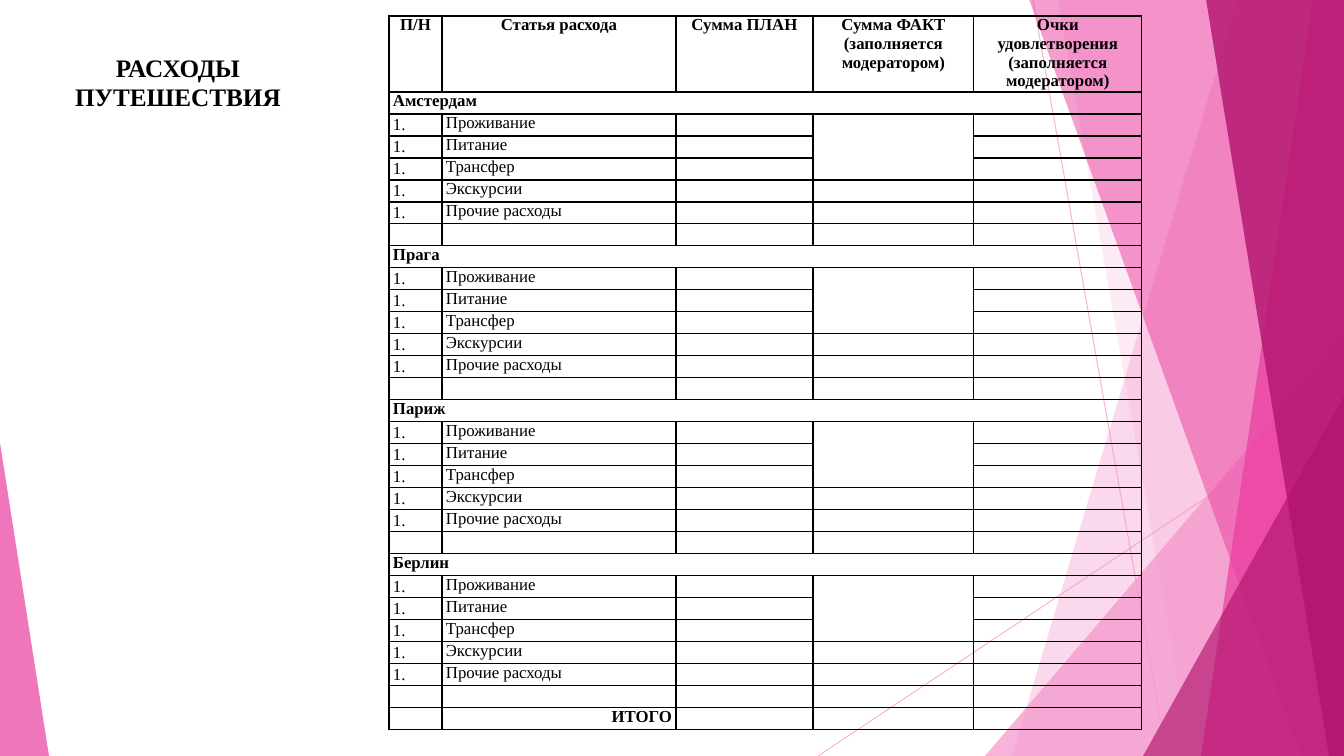
"""Build the travel expenses slide with its table of cities and costs."""
from dataclasses import dataclass

from lxml import etree
from pptx import Presentation
from pptx.dml.color import RGBColor
from pptx.enum.shapes import MSO_CONNECTOR, MSO_SHAPE
from pptx.enum.text import MSO_ANCHOR, MSO_AUTO_SIZE, PP_ALIGN
from pptx.oxml.ns import qn
from pptx.util import Pt

STRAIGHT = MSO_CONNECTOR.STRAIGHT
TRIANGLE = MSO_SHAPE.ISOSCELES_TRIANGLE
TOP = MSO_ANCHOR.TOP
NO_AUTOFIT = MSO_AUTO_SIZE.NONE
LEFT, CENTER, RIGHT = PP_ALIGN.LEFT, PP_ALIGN.CENTER, PP_ALIGN.RIGHT

SLIDE_W, SLIDE_H = 1344, 756
EMU_PER_PX = 12192000 / SLIDE_W
TITLE_ONLY = 5


@dataclass(frozen=True)
class Theme:
    font: str = "Times New Roman"
    title_size: int = 18
    cell_size: int = 12
    hairline: float = 0.75
    border: float = 1
    ink: str = "000000"
    pink: str = "F496CB"
    magenta: str = "EB3D9F"
    plum: str = "B2136D"


@dataclass(frozen=True)
class Ray:
    x1: int
    y1: int
    x2: int
    y2: int


@dataclass(frozen=True)
class Band:
    top_x: int
    bottom_x: int
    color: str
    opacity: int


@dataclass(frozen=True)
class Peak:
    left: int
    top: int
    width: int
    apex: float
    color: str
    opacity: int


THEME = Theme()
RAYS = [Ray(1033, 0, 1167, SLIDE_H), Ray(SLIDE_W, 406, 818, SLIDE_H)]
RAY_OPACITY = 70
FACETS = [
    Band(1238, 1012, THEME.pink, 36),
    Band(1058, 1191, THEME.pink, 20),
    Peak(985, 336, 359, 1, THEME.pink, 72),
    Band(1029, 1301, THEME.magenta, 50),
    Band(1313, 1201, THEME.magenta, 70),
    Band(1206, 1329, THEME.plum, 80),
    Peak(1143, 396, 201, 1, THEME.plum, 66),
    Peak(0, 443, 49, 0, THEME.magenta, 70),
]

TITLE = ["РАСХОДЫ", "ПУТЕШЕСТВИЯ"]
MODERATOR = "(заполняется модератором)"
HEADERS = [["П/Н"], ["Статья расхода"], ["Сумма ПЛАН"],
           ["Сумма ФАКТ", MODERATOR], ["Очки удовлетворения", MODERATOR]]
CITIES = ["Амстердам", "Прага", "Париж", "Берлин"]
EXPENSES = ["Проживание", "Питание", "Трансфер", "Экскурсии", "Прочие расходы"]
TOTAL = "ИТОГО"
NUMBER_COL, EXPENSE_COL, FACT_COL = 0, 1, 3
SHARED_FACT_ROWS = 3
COLUMN_WIDTHS = [53, 234, 137, 161, 168]
TABLE_LEFT, TABLE_TOP = 389, 16
HEADER_HEIGHT, ROW_HEIGHT = 76, 22
CELL_INSET, NUMBER_DROP = 4, 2
CITY_ROWS = len(EXPENSES) + 2
ROW_COUNT = 2 + CITY_ROWS * len(CITIES)


def px(length: int) -> int:
    """Turn px into EMU."""
    return round(length * EMU_PER_PX)


def set_opacity(shape, percent: int) -> None:
    """Give every solid colour of a shape the same opacity."""
    for color in shape.element.spPr.iter(qn("a:srgbClr")):
        etree.SubElement(color, qn("a:alpha"), val=str(percent * 1000))


def draw_ray(shapes, ray: Ray) -> None:
    """Draw one thin background line."""
    line = shapes.add_connector(STRAIGHT, px(ray.x1), px(ray.y1), px(ray.x2), px(ray.y2))
    line.line.color.rgb = RGBColor.from_string(THEME.pink)
    line.line.width = Pt(THEME.hairline)
    set_opacity(line, RAY_OPACITY)
    etree.SubElement(line.element.spPr, qn("a:effectLst"))


def add_band(shapes, band: Band):
    """Add a slanted facet that reaches the right edge."""
    outline = shapes.build_freeform(px(band.top_x), px(-1))
    outline.add_line_segments([(px(SLIDE_W), px(-1)), (px(SLIDE_W), px(SLIDE_H)),
                               (px(band.bottom_x), px(SLIDE_H))], close=True)
    return outline.convert_to_shape()


def add_peak(shapes, peak: Peak):
    """Add a triangle that stands on the bottom edge."""
    triangle = shapes.add_shape(TRIANGLE, px(peak.left), px(peak.top),
                                px(peak.width), px(SLIDE_H - peak.top))
    triangle.adjustments[0] = peak.apex
    return triangle


def draw_facet(shapes, facet: Band | Peak) -> None:
    """Draw one translucent background facet."""
    shape = add_band(shapes, facet) if isinstance(facet, Band) else add_peak(shapes, facet)
    shape.shadow.inherit = False
    shape.fill.solid()
    shape.fill.fore_color.rgb = RGBColor.from_string(facet.color)
    shape.line.fill.background()
    set_opacity(shape, facet.opacity)


def write(frame, lines: list[str], size: int, bold: bool, align) -> None:
    """Write one paragraph per line in the theme font."""
    for index, line in enumerate(lines):
        paragraph = frame.add_paragraph() if index else frame.paragraphs[0]
        paragraph.alignment = align
        run = paragraph.add_run()
        run.text = line
        run.font.name = THEME.font
        run.font.size = Pt(size)
        run.font.bold = bold
        run.font.color.rgb = RGBColor.from_string(THEME.ink)


def draw_title(title) -> None:
    """Place and write the title."""
    title.left, title.top, title.width, title.height = px(-198), px(48), px(752), px(71)
    frame = title.text_frame
    frame.word_wrap = True
    frame.auto_size = NO_AUTOFIT
    frame.vertical_anchor = TOP
    write(frame, TITLE, THEME.title_size, True, CENTER)
    for paragraph in frame.paragraphs:
        paragraph.line_spacing = 0.99


def format_cell(cell) -> None:
    """Clear a cell's fill, border it and keep its empty line small."""
    cell.margin_left = cell.margin_right = px(CELL_INSET)
    cell.margin_top = cell.margin_bottom = 0
    cell.fill.background()
    properties = cell._tc.get_or_add_tcPr()
    for index, side in enumerate(("lnL", "lnR", "lnT", "lnB")):
        border = etree.Element(qn(f"a:{side}"), w=str(Pt(THEME.border)))
        fill = etree.SubElement(border, qn("a:solidFill"))
        etree.SubElement(fill, qn("a:srgbClr"), val=THEME.ink)
        properties.insert(index, border)
    etree.SubElement(cell.text_frame.paragraphs[0]._p, qn("a:endParaRPr"),
                     sz=str(THEME.cell_size * 100))


def fill_cell(cell, lines: list[str], bold: bool = False, align=LEFT) -> None:
    """Write text into a table cell."""
    write(cell.text_frame, lines, THEME.cell_size, bold, align)


def fill_city(table, top: int, city: str) -> None:
    """Fill one city's heading and its expense rows."""
    table.cell(top, 0).merge(table.cell(top, len(COLUMN_WIDTHS) - 1))
    fill_cell(table.cell(top, 0), [city], bold=True)
    for row, expense in enumerate(EXPENSES, top + 1):
        number = table.cell(row, NUMBER_COL)
        number.margin_top = px(NUMBER_DROP)
        fill_cell(number, ["1."])
        fill_cell(table.cell(row, EXPENSE_COL), [expense])
    table.cell(top + 1, FACT_COL).merge(table.cell(top + SHARED_FACT_ROWS, FACT_COL))


def draw_table(shapes) -> None:
    """Draw the expense table."""
    heights = [HEADER_HEIGHT] + [ROW_HEIGHT] * (ROW_COUNT - 1)
    table = shapes.add_table(ROW_COUNT, len(COLUMN_WIDTHS), px(TABLE_LEFT), px(TABLE_TOP),
                             px(sum(COLUMN_WIDTHS)), px(sum(heights))).table
    table.first_row = table.horz_banding = False
    for column, width in zip(table.columns, COLUMN_WIDTHS):
        column.width = px(width)
    for row, height in zip(table.rows, heights):
        row.height = px(height)
    for cell in table.iter_cells():
        format_cell(cell)
    for column, header in enumerate(HEADERS):
        fill_cell(table.cell(0, column), header, bold=True, align=CENTER)
    for index, city in enumerate(CITIES):
        fill_city(table, 1 + index * CITY_ROWS, city)
    fill_cell(table.cell(ROW_COUNT - 1, EXPENSE_COL), [TOTAL], bold=True, align=RIGHT)


def main() -> None:
    """Build and save the slide."""
    deck = Presentation()
    deck.slide_width, deck.slide_height = px(SLIDE_W), px(SLIDE_H)
    shapes = deck.slides.add_slide(deck.slide_layouts[TITLE_ONLY]).shapes
    for ray in RAYS:
        draw_ray(shapes, ray)
    for facet in FACETS:
        draw_facet(shapes, facet)
    draw_table(shapes)
    draw_title(shapes.title)
    deck.save("out.pptx")


if __name__ == "__main__":
    main()
